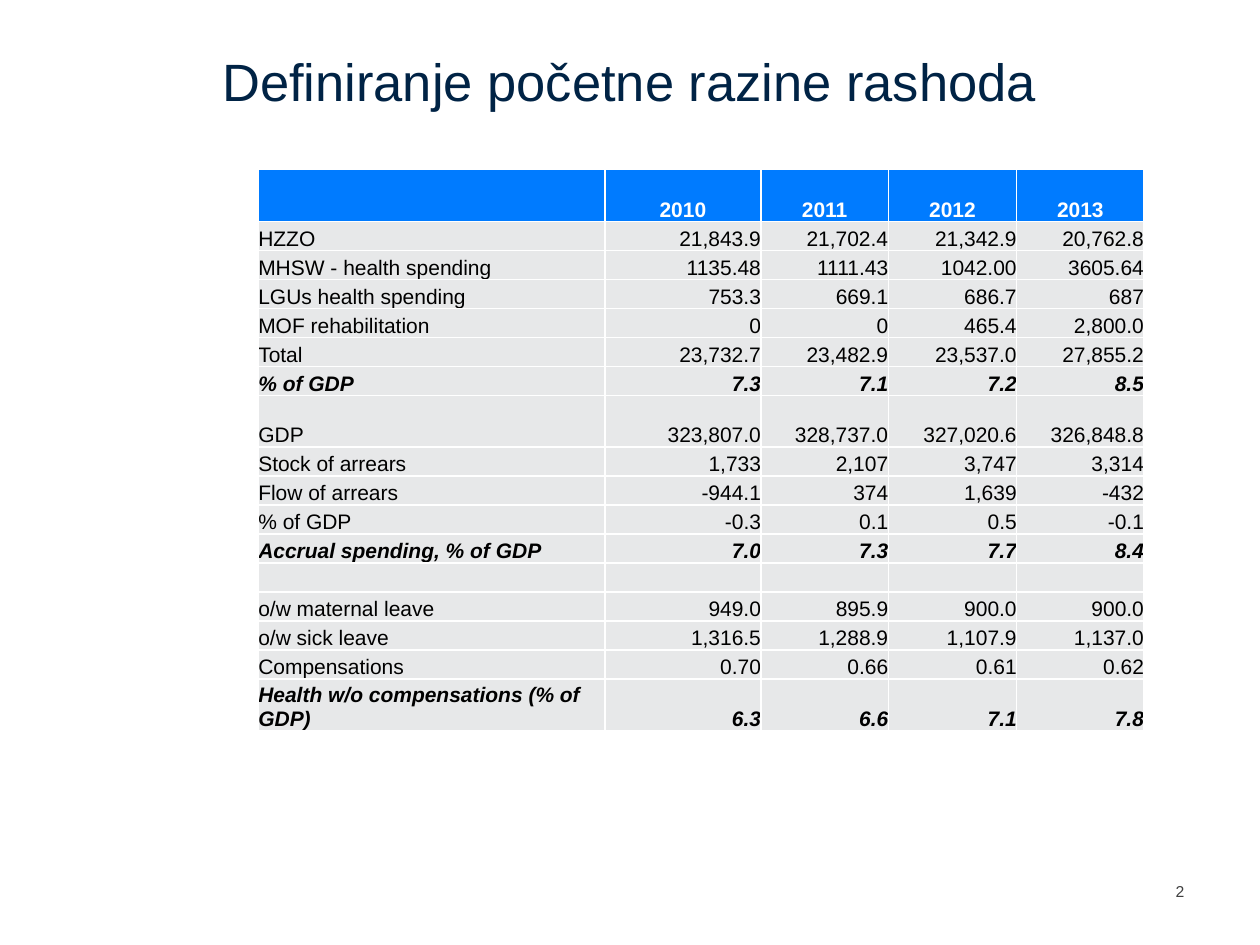
"""Builds a slide with a table of health spending by year."""
from dataclasses import dataclass
from typing import Any

from lxml import etree
from pptx import Presentation, util as u
from pptx.dml.color import RGBColor
from pptx.enum import text
from pptx.oxml.ns import qn


@dataclass(frozen=True)
class Theme:
    font: str = "Arial"
    title: str = "002345"
    number: str = "404040"
    header: str = "007BFF"
    body: str = "E7E8E9"
    white: str = "FFFFFF"
    black: str = "000000"
    title_pt: float = 30
    table_pt: float = 12
    number_pt: float = 9
    border_pt: float = 1


@dataclass(frozen=True)
class Row:
    label: str = ""
    values: tuple[str, ...] = ("",) * 4
    height: float = 0.23
    strong: bool = False
    header: bool = False


T = Theme()
LEFT, CENTER, RIGHT = text.PP_ALIGN.LEFT, text.PP_ALIGN.CENTER, text.PP_ALIGN.RIGHT
COLUMNS = (2.75, 1.24, 1.01, 1.02, 1.01)
ROWS = (
    Row("", ("2010", "2011", "2012", "2013"), height=0.42, header=True),
    Row("HZZO", ("21,843.9", "21,702.4", "21,342.9", "20,762.8")),
    Row("MHSW - health spending", ("1135.48", "1111.43", "1042.00", "3605.64")),
    Row("LGUs health spending", ("753.3", "669.1", "686.7", "687")),
    Row("MOF rehabilitation", ("0", "0", "465.4", "2,800.0")),
    Row("Total", ("23,732.7", "23,482.9", "23,537.0", "27,855.2")),
    Row("% of GDP", ("7.3", "7.1", "7.2", "8.5"), strong=True),
    Row("GDP", ("323,807.0", "328,737.0", "327,020.6", "326,848.8"), height=0.41),
    Row("Stock of arrears", ("1,733", "2,107", "3,747", "3,314")),
    Row("Flow of arrears", ("-944.1", "374", "1,639", "-432")),
    Row("% of GDP", ("-0.3", "0.1", "0.5", "-0.1")),
    Row("Accrual spending, % of GDP", ("7.0", "7.3", "7.7", "8.4"), strong=True),
    Row(),
    Row("o/w maternal leave", ("949.0", "895.9", "900.0", "900.0")),
    Row("o/w sick leave", ("1,316.5", "1,288.9", "1,107.9", "1,137.0")),
    Row("Compensations", ("0.70", "0.66", "0.61", "0.62")),
    Row("Health w/o compensations (% of GDP)", ("6.3", "6.6", "7.1", "7.8"), height=0.41, strong=True),
)


def apply(target: Any, values: dict[str, Any]) -> None:
    """Set each named attribute on the target."""
    for name, value in values.items():
        setattr(target, name, value)


def write(p: Any, words: str, size: float, color: str, align: Any, **style: bool) -> None:
    """Write one formatted run, or size the paragraph if it is empty."""
    p.alignment = align
    if not words:
        etree.SubElement(p._p, qn("a:endParaRPr"), sz=str(int(size * 100)))
        return
    r = p.add_run()
    r.text = words
    apply(r.font, {"name": T.font, "size": u.Pt(size), **style})
    r.font.color.rgb = RGBColor.from_string(color)


def margins(left: float = 0, top: float = 0, right: float = 0, bottom: float = 0) -> dict[str, Any]:
    """Return the four inner margins as format values."""
    return {"margin_left": u.Inches(left), "margin_top": u.Inches(top),
            "margin_right": u.Inches(right), "margin_bottom": u.Inches(bottom)}


def add_text(s: Any, box: tuple[float, ...], words: str, size: float, color: str,
             align: Any, anchor: Any, insets: dict[str, Any]) -> None:
    """Add a wrapped text box."""
    tf = s.shapes.add_textbox(*map(u.Inches, box)).text_frame
    apply(tf, {"word_wrap": True, "vertical_anchor": anchor, **insets})
    write(tf.paragraphs[0], words, size, color, align)


def add_borders(cell: Any) -> None:
    """Draw a thin white line on every side of a cell."""
    tc_pr = cell._tc.get_or_add_tcPr()
    for side in ("lnL", "lnR", "lnT", "lnB"):
        ln = etree.SubElement(tc_pr, qn(f"a:{side}"), w=str(u.Pt(T.border_pt)))
        fill = etree.SubElement(ln, qn("a:solidFill"))
        etree.SubElement(fill, qn("a:srgbClr"), val=T.white)


def fill_cell(cell: Any, row: Row, words: str, align: Any) -> None:
    """Format one table cell and write its text."""
    add_borders(cell)
    apply(cell, {"vertical_anchor": text.MSO_ANCHOR.BOTTOM, **margins()})
    cell.fill.solid()
    cell.fill.fore_color.rgb = RGBColor.from_string(T.header if row.header else T.body)
    write(cell.text_frame.paragraphs[0], words, T.table_pt, T.white if row.header else T.black,
          align, bold=row.header or row.strong, italic=row.strong)


def add_spending_table(s: Any, left: float, top: float) -> None:
    """Add the spending table with its column and row sizes."""
    size = (sum(COLUMNS), sum(row.height for row in ROWS))
    table = s.shapes.add_table(len(ROWS), len(COLUMNS), *map(u.Inches, (left, top, *size))).table
    for column, width in zip(table.columns, COLUMNS):
        column.width = u.Inches(width)
    for i, row in enumerate(ROWS):
        table.rows[i].height = u.Inches(row.height)
        for j, words in enumerate((row.label, *row.values)):
            align = LEFT if j == 0 else CENTER if row.header else RIGHT
            fill_cell(table.cell(i, j), row, words, align)


def main() -> None:
    """Build and save the slide."""
    prs = Presentation()
    apply(prs, {"slide_width": u.Inches(10), "slide_height": u.Inches(7.5)})
    s = prs.slides.add_slide(prs.slide_layouts[6])
    add_text(s, (0.35, 0.28, 9.29, 0.63), "Definiranje početne razine rashoda", T.title_pt, T.title,
             CENTER, text.MSO_ANCHOR.BOTTOM, margins(bottom=0.02))
    add_text(s, (9.33, 6.96, 0.31, 0.24), "2", T.number_pt, T.number,
             LEFT, text.MSO_ANCHOR.TOP, margins(top=0.04))
    add_spending_table(s, 2.05, 1.34)
    prs.save("out.pptx")


if __name__ == "__main__":
    main()
